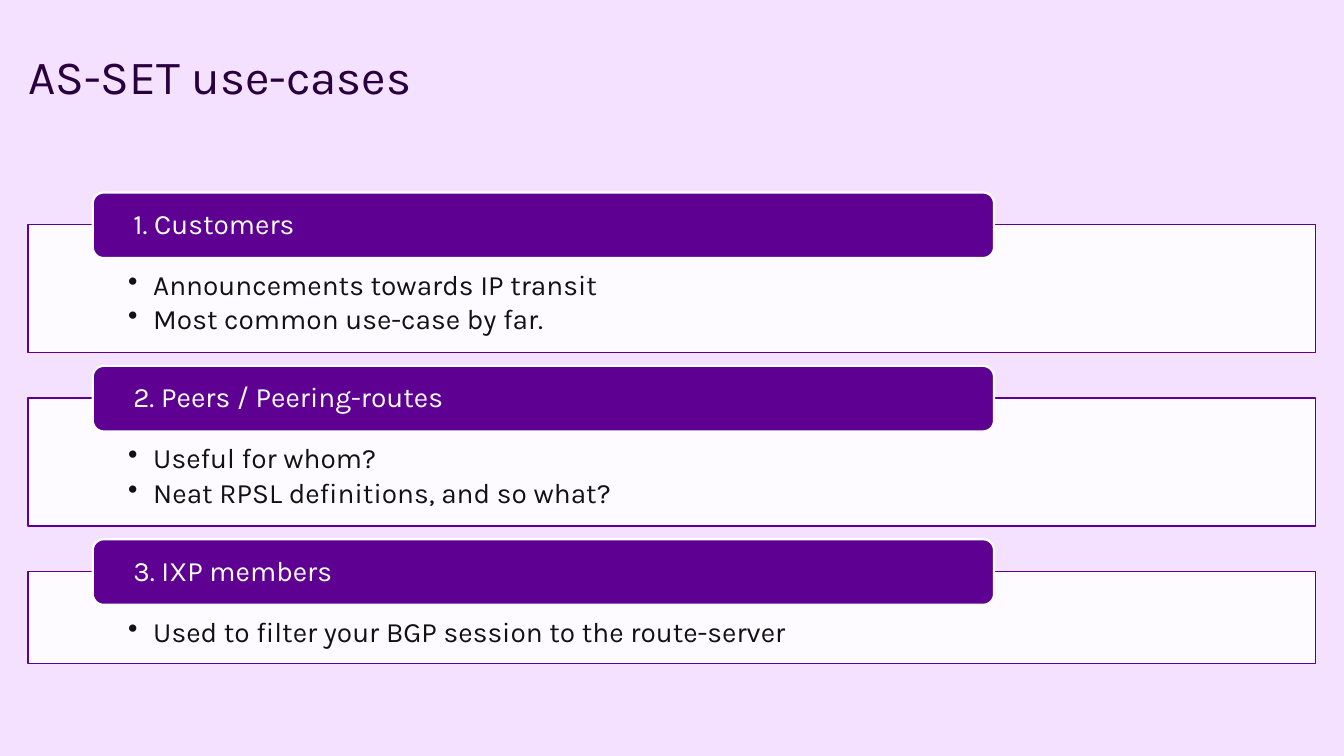
from dataclasses import dataclass
from lxml.etree import SubElement
from pptx import Presentation
from pptx.dml.color import RGBColor as Rgb
from pptx.enum.shapes import MSO_SHAPE as Shape
from pptx.enum.text import MSO_ANCHOR as Anchor, PP_ALIGN as Align
from pptx.oxml.ns import qn
from pptx.util import Inches, Pt


@dataclass(frozen=True)
class Theme:
    font: str = "Karla"
    back: str = "F4E0FF"
    title: str = "29003E"
    bar: str = "5E0092"
    white: str = "FFFFFF"
    ink: str = "121214"
    head: int = 34
    body: int = 20


THEME = Theme()
TOPICS = [
    ("1. Customers", ["Announcements towards IP transit", "Most common use-case by far."]),
    ("2. Peers / Peering-routes", ["Useful for whom?", "Neat RPSL definitions, and so what?"]),
    ("3. IXP members", ["Used to filter your BGP session to the route-server"]),
]


def write(shape, lines, size, color, pad=(0, 0, 0, 0), anchor=Anchor.TOP,
          pitch=0.9, after=0, bullet=False):
    frame = shape.text_frame
    frame.word_wrap = True
    frame.vertical_anchor = anchor
    frame.margin_left, frame.margin_top, frame.margin_right, frame.margin_bottom = map(Inches, pad)
    for i, line in enumerate(lines):
        para = frame.add_paragraph() if i else frame.paragraphs[0]
        if bullet:
            props = para._p.get_or_add_pPr()
            props.set("marL", str(Inches(0.25)))
            props.set("indent", str(Inches(-0.25)))
            SubElement(props, qn("a:buChar"), char="•")
        para.alignment = Align.LEFT
        para.line_spacing = pitch
        para.space_after = Pt(after)
        run = para.add_run()
        run.text = line
        run.font.name = THEME.font
        run.font.size = Pt(size)
        run.font.color.rgb = Rgb.from_string(color)


def block(slide, kind, box, fill, edge, width):
    shape = slide.shapes.add_shape(kind, *map(Inches, box))
    shape.shadow.inherit = False
    shape.fill.solid()
    shape.fill.fore_color.rgb = Rgb.from_string(fill)
    shape.line.color.rgb = Rgb.from_string(edge)
    shape.line.width = Pt(width)
    return shape


def heading(slide, box, text):
    shape = slide.shapes.add_textbox(*map(Inches, box))
    write(shape, [text], THEME.head, THEME.title, pitch=0.86)


def topic(slide, box, name, points):
    left, top, width, height = box
    panel = block(slide, Shape.RECTANGLE, box, THEME.white, THEME.bar, 1)
    tint = panel.fill._xPr.find(".//" + qn("a:srgbClr"))
    SubElement(tint, qn("a:alpha"), val="90000")
    write(panel, points, THEME.body, THEME.ink, pad=(0.99, 0.46, 0.99, 0.16),
          after=3, bullet=True)
    label = (left + 0.64, top - 0.32, width * 0.7, 0.65)
    bar = block(slide, Shape.ROUNDED_RECTANGLE, label, THEME.bar, THEME.white, 1.5)
    write(bar, [name], THEME.body, THEME.white, pad=(0.37, 0, 0.37, 0), anchor=Anchor.MIDDLE)


def topics(slide, box, items, gap=0.45):
    left, top, width = box
    for name, points in items:
        height = 0.55 + 0.36 * len(points)
        topic(slide, (left, top, width, height), name, points)
        top += height + gap


def main():
    deck = Presentation()
    deck.slide_width, deck.slide_height = Inches(13.33), Inches(7.5)
    slide = deck.slides.add_slide(deck.slide_layouts[6])
    slide.background.fill.solid()
    slide.background.fill.fore_color.rgb = Rgb.from_string(THEME.back)
    heading(slide, (0.28, 0.55, 12.77, 1.01), "AS-SET use-cases")
    topics(slide, (0.28, 2.23, 12.77), TOPICS)
    deck.save("out.pptx")


if __name__ == "__main__":
    main()
